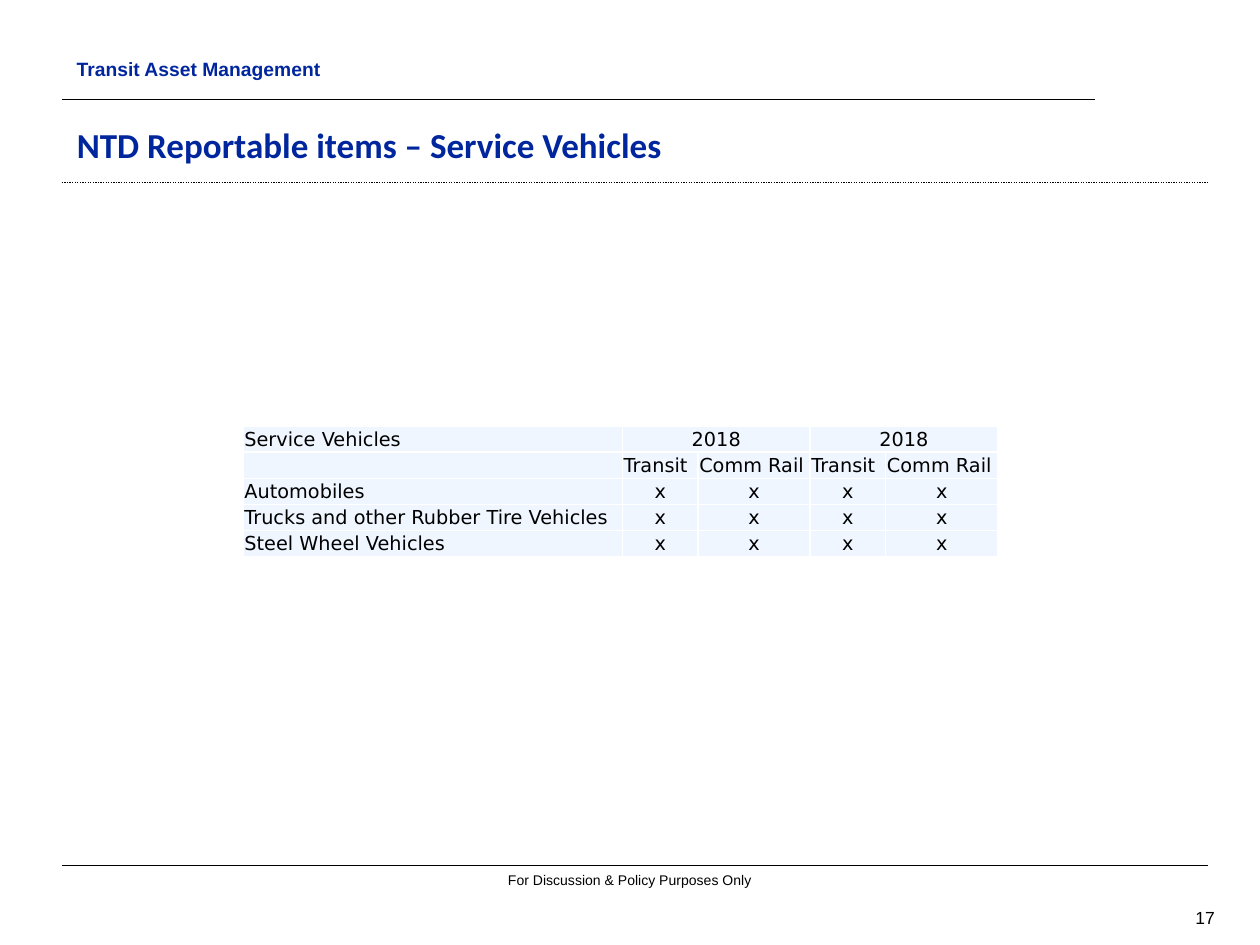
"""Build the service vehicles slide with its table of reportable items."""
import pptx
import pptx.util
import pptx.dml.color
import pptx.enum.dml
import pptx.enum.shapes
import pptx.enum.text
import pptx.oxml.ns
from lxml import etree

Inches, Pt = pptx.util.Inches, pptx.util.Pt
ALIGN, ANCHOR = pptx.enum.text.PP_ALIGN, pptx.enum.text.MSO_ANCHOR
DASH = pptx.enum.dml.MSO_LINE
BLACK = pptx.dml.color.RGBColor(0x00, 0x00, 0x00)
NAVY = pptx.dml.color.RGBColor(0x00, 0x26, 0x9E)
PALE = pptx.dml.color.RGBColor(0xEF, 0xF6, 0xFF)
qn = pptx.oxml.ns.qn


def style(par, font, size, color, bold, align):
    par.alignment = align
    for run in par.runs:
        run.font.name = font
        run.font.size = Pt(size)
        run.font.bold = bold
        run.font.color.rgb = color


def border(cell):
    props = cell._tc.get_or_add_tcPr()
    for side in ("a:lnL", "a:lnR", "a:lnT", "a:lnB"):
        line = etree.SubElement(props, qn(side), w=str(Pt(1)))
        fill = etree.SubElement(line, qn("a:solidFill"))
        etree.SubElement(fill, qn("a:srgbClr"), val="FFFFFF")


deck = pptx.Presentation()
deck.slide_width, deck.slide_height = Inches(10), Inches(7.5)
slide = deck.slides.add_slide(deck.slide_layouts[5])
shapes = slide.shapes

rules = [(0.79, 8.69, 1, DASH.SOLID), (1.45, 9.59, 0.75, DASH.ROUND_DOT),
         (6.87, 9.59, 0.75, DASH.SOLID)]
for top, right, width, dash in rules:
    rule = shapes.add_connector(pptx.enum.shapes.MSO_CONNECTOR.STRAIGHT,
                                Inches(0.49), Inches(top), Inches(right), Inches(top))
    rule.line.color.rgb = BLACK
    rule.line.width = Pt(width)
    rule.line.dash_style = dash
    etree.SubElement(rule._element.spPr, qn("a:effectLst"))

title = shapes.title
head, foot, page = [shapes.add_textbox(0, 0, 0, 0) for _ in range(3)]
texts = [
    (title, "NTD Reportable items – Service Vehicles", (0.51, 0.93, 7.41, 0.44),
     "Calibri", 20, NAVY, True, ALIGN.LEFT, ANCHOR.TOP),
    (head, "Transit Asset Management", (0.51, 0.42, 7.99, 0.25),
     "Arial", 11, NAVY, True, ALIGN.LEFT, ANCHOR.MIDDLE),
    (foot, "For Discussion & Policy Purposes Only", (3.57, 6.87, 2.86, 0.24),
     "Arial", 8, BLACK, False, ALIGN.CENTER, ANCHOR.TOP),
    (page, "17", (8.91, 7.16, 0.83, 0.25),
     "Arial", 10, BLACK, False, ALIGN.RIGHT, ANCHOR.MIDDLE),
]
for box, text, place, font, size, color, bold, align, anchor in texts:
    box.left, box.top, box.width, box.height = map(Inches, place)
    frame = box.text_frame
    frame.text = text
    frame.word_wrap = True
    frame.auto_size = pptx.enum.text.MSO_AUTO_SIZE.NONE
    frame.vertical_anchor = anchor
    style(frame.paragraphs[0], font, size, color, bold, align)

rows = [
    ["Service Vehicles", "2018", "", "2018", ""],
    ["", "Transit", "Comm Rail", "Transit", "Comm Rail"],
    ["Automobiles"] + ["x"] * 4,
    ["Trucks and other Rubber Tire Vehicles"] + ["x"] * 4,
    ["Steel Wheel Vehicles"] + ["x"] * 4,
]
widths = [3.01, 0.6, 0.89, 0.6, 0.89]
table = shapes.add_table(len(rows), len(widths), Inches(1.93), Inches(3.38),
                         Inches(sum(widths)), Inches(1.04)).table
for col, width in zip(table.columns, widths):
    col.width = Inches(width)
for r, row in enumerate(rows):
    table.rows[r].height = Inches(1.04 / len(rows))
    for c, text in enumerate(row):
        cell = table.cell(r, c)
        cell.text = text
        cell.vertical_anchor = ANCHOR.MIDDLE
        cell.margin_left = cell.margin_right = cell.margin_top = Inches(0.01)
        cell.margin_bottom = 0
        border(cell)
        cell.fill.solid()
        cell.fill.fore_color.rgb = PALE
        par = cell.text_frame.paragraphs[0]
        align = ALIGN.CENTER if text in ("2018", "x") else ALIGN.LEFT
        style(par, "DejaVu Sans", 11, BLACK, False, align)
        if not text:
            etree.SubElement(par._p, qn("a:endParaRPr"), sz="1100")
for c in (1, 3):
    table.cell(0, c).merge(table.cell(0, c + 1))

deck.save("out.pptx")
